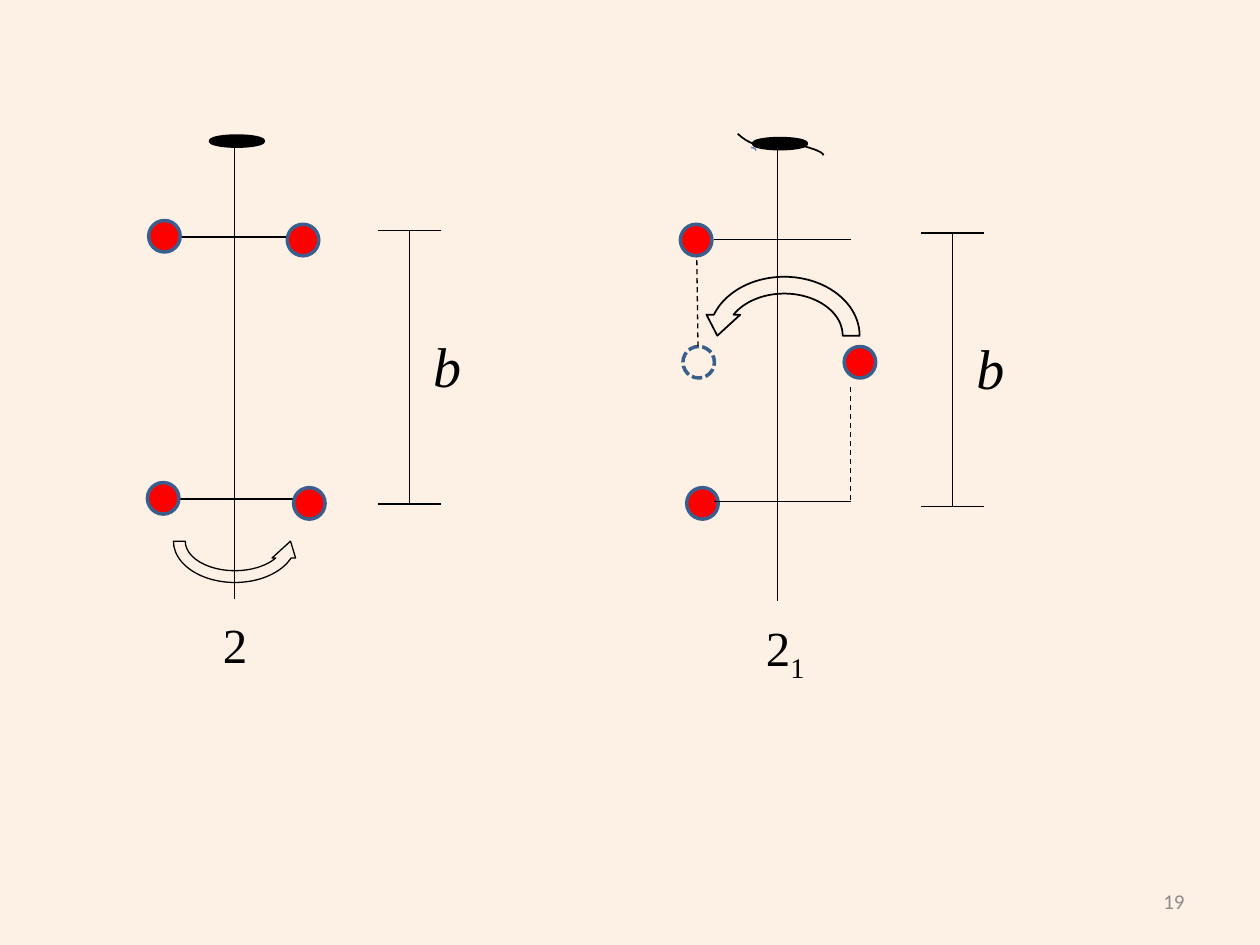
from lxml.etree import SubElement
from pptx import Presentation
from pptx.dml.color import RGBColor
from pptx.enum.dml import MSO_LINE_DASH_STYLE as Dash
from pptx.enum.shapes import MSO_CONNECTOR as Connector, MSO_SHAPE as Shape
from pptx.enum.text import MSO_ANCHOR as Anchor, MSO_AUTO_SIZE as AutoSize, PP_ALIGN as Align
from pptx.oxml.ns import qn
from pptx.util import Inches, Pt

CREAM = RGBColor(0xFD, 0xF0, 0xE4)
BLACK = RGBColor(0, 0, 0)
RED = RGBColor(0xFF, 0, 0)
RIM_BLUE = RGBColor(0x3A, 0x5F, 0x8C)
ARC_BLUE = RGBColor(0x4B, 0x7E, 0xBC)
GREY = RGBColor(0x8C, 0x8C, 0x8C)
ATOM_SIZE = 0.25


def add_line(page, x1, y1, x2, y2, dash=None):
    line = page.shapes.add_connector(
        Connector.STRAIGHT, Inches(x1), Inches(y1), Inches(x2), Inches(y2))
    line.line.color.rgb = BLACK
    line.line.width = Pt(0.75)
    if dash:
        line.line.dash_style = dash
    SubElement(line._element.spPr, qn("a:effectLst"))


def add_outline(page, kind, left, top, width, height, color, weight, fill=None, turn=0):
    shape = page.shapes.add_shape(
        kind, Inches(left), Inches(top), Inches(width), Inches(height))
    shape.shadow.inherit = False
    shape.rotation = turn
    if fill is None:
        shape.fill.background()
    else:
        shape.fill.solid()
        shape.fill.fore_color.rgb = fill
    shape.line.color.rgb = color
    shape.line.width = Pt(weight)
    return shape


def add_atom(page, left, top, fill=RED):
    return add_outline(page, Shape.OVAL, left, top, ATOM_SIZE, ATOM_SIZE, RIM_BLUE, 2, fill)


def add_turn_arrow(page, left, top, width, height, weight, flip):
    """Add a curved arrow, mirrored by flipH or flipV."""
    arrow = add_outline(page, Shape.CIRCULAR_ARROW, left, top, width, height, BLACK, weight)
    arrow._element.spPr.find(qn("a:xfrm")).set(flip, "1")


def add_label(page, left, top, width, height, text, size, italic=False, subscript=""):
    box = page.shapes.add_textbox(Inches(left), Inches(top), Inches(width), Inches(height))
    frame = box.text_frame
    frame.word_wrap = False
    frame.auto_size = AutoSize.SHAPE_TO_FIT_TEXT
    para = frame.paragraphs[0]
    para.font.name = "Times New Roman"
    para.font.size = Pt(size)
    para.font.italic = italic
    para.font.color.rgb = BLACK
    para.add_run().text = text
    if subscript:
        span = para.add_run()
        span.text = subscript
        span.font._element.set("baseline", "-25000")


def add_axis_frame(page, left, top, label_width, subscript=""):
    """Draw the axis with its symbol, two crossbars and the repeat length b."""
    for y in (0.8, 2.88):
        add_line(page, left + 0.19, top + y, left + 1.27, top + y)
    add_line(page, left + 0.69, top + 0.08, left + 0.69, top + 3.67)
    add_outline(page, Shape.OVAL, left + 0.5, top, 0.42, 0.08, BLACK, 2, BLACK)
    add_label(page, left + 0.5, top + 3.75, label_width, 0.57, "2", 28, subscript=subscript)

    bracket_ends = (top + 0.75, top + 2.92)
    for y in bracket_ends:
        add_line(page, left + 1.83, y, left + 2.33, y)
    add_line(page, left + 2.08, bracket_ends[0], left + 2.08, bracket_ends[1])
    add_label(page, left + 2.17, top + 1.5, 0.43, 0.64, "b", 32, italic=True)


def add_rotation_axis(page, left, top):
    add_axis_frame(page, left, top, label_width=0.4)
    for x, y in ((0, 2.75), (1.16, 2.79), (0.01, 0.67), (1.11, 0.7)):
        add_atom(page, left + x, top + y)
    add_turn_arrow(page, left + 0.16, top + 2.84, 1.07, 0.75, 0.75, "flipV")


def add_screw_axis(page, left, top):
    add_atom(page, left - 0.03, top + 2.77)
    add_axis_frame(page, left, top, label_width=0.55, subscript="1")
    add_outline(page, Shape.ARC, left + 0.44, top + 0.07, 0.08, 0.05, ARC_BLUE, 0.75)
    add_outline(page, Shape.ARC, left + 0.64, top + 0.05, 0.42, 0.08, BLACK, 1, turn=11.7)
    add_outline(page, Shape.ARC, left + 0.31, top - 0.48, 0.42, 0.58, BLACK, 1, turn=133.8)

    add_atom(page, left - 0.08, top + 0.68)
    add_atom(page, left + 1.22, top + 1.65)
    add_line(page, left + 1.27, top + 2.87, left + 1.27, top + 1.95, Dash.DASH)
    vacant_site = add_atom(page, left - 0.06, top + 1.65, fill=None)
    vacant_site.line.dash_style = Dash.SQUARE_DOT
    add_line(page, left + 0.06, top + 1.65, left + 0.05, top + 0.93, Dash.DASH)
    add_turn_arrow(page, left + 0.08, top + 1.03, 1.33, 1.07, 1, "flipH")


def add_page_number(page, left, top, width, height):
    box = page.shapes.add_textbox(Inches(left), Inches(top), Inches(width), Inches(height))
    frame = box.text_frame
    frame.word_wrap = True
    frame.vertical_anchor = Anchor.MIDDLE
    para = frame.paragraphs[0]
    para.text = "19"
    para.alignment = Align.RIGHT
    para.font.name = "Calibri"
    para.font.size = Pt(12)
    para.font.color.rgb = GREY


def main():
    deck = Presentation()
    deck.slide_width, deck.slide_height = Inches(10), Inches(7.5)
    page = deck.slides.add_slide(deck.slide_layouts[6])
    page.background.fill.solid()
    page.background.fill.fore_color.rgb = CREAM
    add_page_number(page, 7.17, 6.95, 2.33, 0.4)
    add_rotation_axis(page, 1.17, 1.08)
    add_screw_axis(page, 5.48, 1.1)
    deck.save("out.pptx")


if __name__ == "__main__":
    main()
